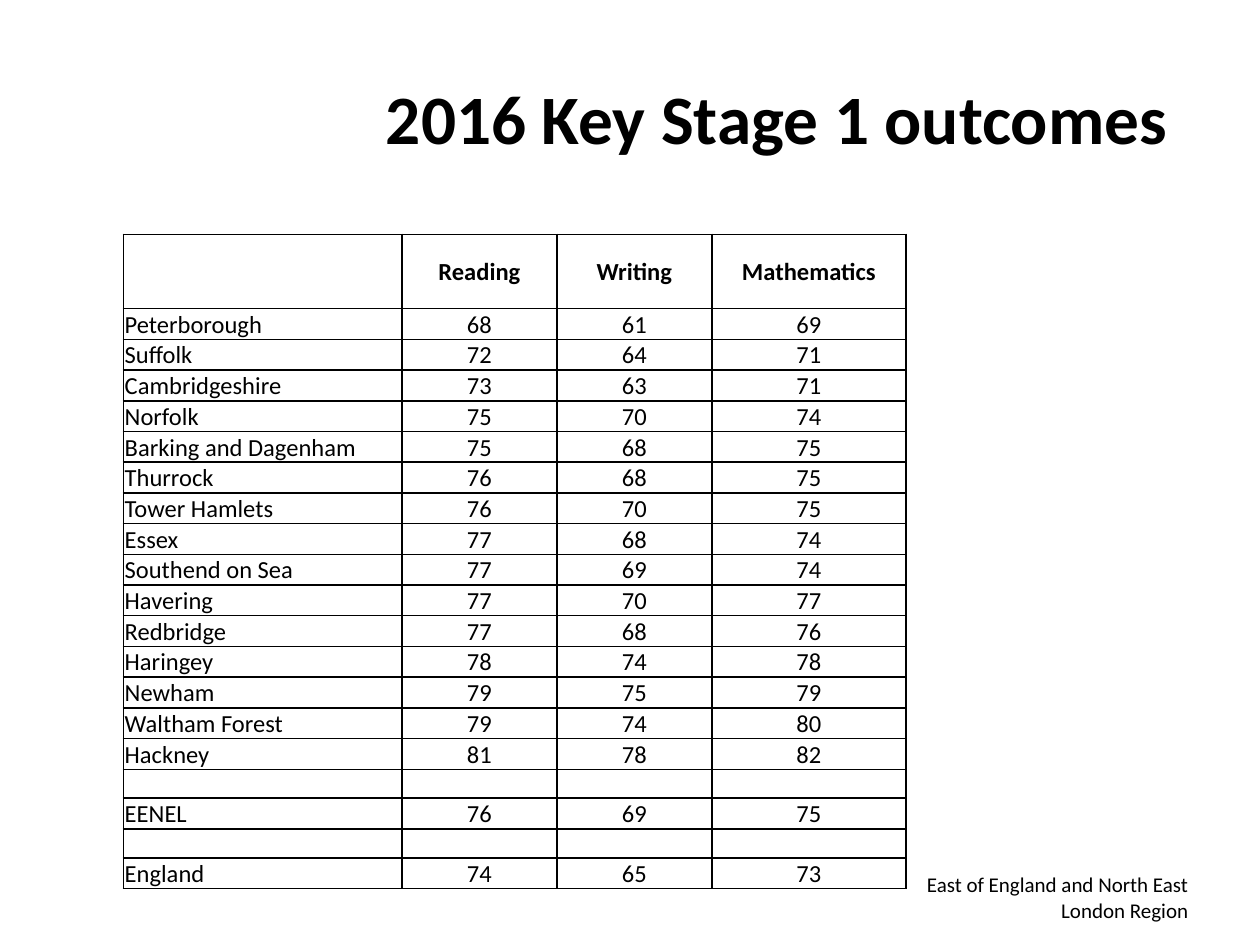
from lxml import etree
from pptx import Presentation
from pptx.dml.color import RGBColor
from pptx.enum.text import MSO_ANCHOR, PP_ALIGN
from pptx.oxml import parse_xml
from pptx.oxml.ns import nsdecls, qn
from pptx.util import Inches, Pt

LEFT, CENTER, RIGHT = PP_ALIGN.LEFT, PP_ALIGN.CENTER, PP_ALIGN.RIGHT
MIDDLE, BOTTOM = MSO_ANCHOR.MIDDLE, MSO_ANCHOR.BOTTOM
FONT = "Calibri"
BLACK = "000000"
TITLE_ONLY = 5

COLUMN_WIDTHS = [2.21, 1.23, 1.23, 1.54]
HEADER_HEIGHT, ROW_HEIGHT = 0.59, 0.23
SUMMARY_ROW = "EENEL"
BLANK_ROW = ("", "", "", "")
OUTCOMES = [
    ("", "Reading", "Writing", "Mathematics"),
    ("Peterborough", 68, 61, 69),
    ("Suffolk", 72, 64, 71),
    ("Cambridgeshire", 73, 63, 71),
    ("Norfolk", 75, 70, 74),
    ("Barking and Dagenham", 75, 68, 75),
    ("Thurrock", 76, 68, 75),
    ("Tower Hamlets", 76, 70, 75),
    ("Essex", 77, 68, 74),
    ("Southend on Sea", 77, 69, 74),
    ("Havering", 77, 70, 77),
    ("Redbridge", 77, 68, 76),
    ("Haringey", 78, 74, 78),
    ("Newham", 79, 75, 79),
    ("Waltham Forest", 79, 74, 80),
    ("Hackney", 81, 78, 82),
    BLANK_ROW,
    (SUMMARY_ROW, 76, 69, 75),
    BLANK_ROW,
    ("England", 74, 65, 73),
]


def color(value):
    return RGBColor.from_string(value)


def format_text(frame, size, align, bold=False):
    for para in frame.paragraphs:
        para.alignment = align
        for span in para.runs:
            span.font.name = FONT
            span.font.size = Pt(size)
            span.font.bold = bold
            span.font.color.rgb = color(BLACK)


def place(shape, box):
    shape.left, shape.top, shape.width, shape.height = map(Inches, box)


def add_title(page, box):
    title = page.shapes.title
    place(title, box)
    frame = title.text_frame
    frame.text = "2016 Key Stage 1 outcomes"
    frame.vertical_anchor = MIDDLE
    format_text(frame, 39.6, CENTER, bold=True)


def add_region_label(page, box):
    label = page.shapes.add_textbox(*map(Inches, box))
    frame = label.text_frame
    frame.word_wrap = True
    frame.vertical_anchor = MIDDLE
    frame.text = "East of England and North East London Region"
    format_text(frame, 12, RIGHT)


def set_borders(cell, width=1):
    properties = cell._tc.get_or_add_tcPr()
    for position, side in enumerate(("lnL", "lnR", "lnT", "lnB")):
        properties.insert(position, parse_xml(
            f'<a:{side} {nsdecls("a")} w="{Pt(width)}"><a:solidFill>'
            f'<a:srgbClr val="{BLACK}"/></a:solidFill></a:{side}>'))


def shrink_empty_cell(cell):
    """Keep the unseen line of an empty cell from stretching its row."""
    paragraph = cell.text_frame.paragraphs[0]._p
    etree.SubElement(paragraph, qn("a:endParaRPr"), sz="1200")


def fill_cell(cell, value, align, anchor, bold):
    cell.fill.background()
    set_borders(cell)
    cell.margin_left = cell.margin_right = cell.margin_top = Inches(0.01)
    cell.margin_bottom = 0
    cell.vertical_anchor = anchor
    if value == "":
        shrink_empty_cell(cell)
    else:
        cell.text_frame.text = str(value)
        format_text(cell.text_frame, 14, align, bold)


def add_outcomes_table(page, left, top):
    height = HEADER_HEIGHT + ROW_HEIGHT * (len(OUTCOMES) - 1)
    box = (left, top, sum(COLUMN_WIDTHS), height)
    table = page.shapes.add_table(
        len(OUTCOMES), len(COLUMN_WIDTHS), *map(Inches, box)).table
    table.first_row = table.horz_banding = False
    for column, width in zip(table.columns, COLUMN_WIDTHS):
        column.width = Inches(width)
    for row_index, values in enumerate(OUTCOMES):
        is_header = row_index == 0
        row_height = HEADER_HEIGHT if is_header else ROW_HEIGHT
        table.rows[row_index].height = Inches(row_height)
        anchor = BOTTOM if values[0] == SUMMARY_ROW else MIDDLE
        for column_index, value in enumerate(values):
            align = CENTER if column_index else LEFT
            fill_cell(table.cell(row_index, column_index), value, align,
                      anchor, is_header)


def main():
    deck = Presentation()
    deck.slide_width, deck.slide_height = Inches(10), Inches(7.5)
    page = deck.slides.add_slide(deck.slide_layouts[TITLE_ONLY])
    add_region_label(page, (7.2, 6.92, 2.33, 0.4))
    add_title(page, (2.83, 0.3, 6.67, 1.25))
    add_outcomes_table(page, 0.98, 1.86)
    deck.save("out.pptx")


if __name__ == "__main__":
    main()
